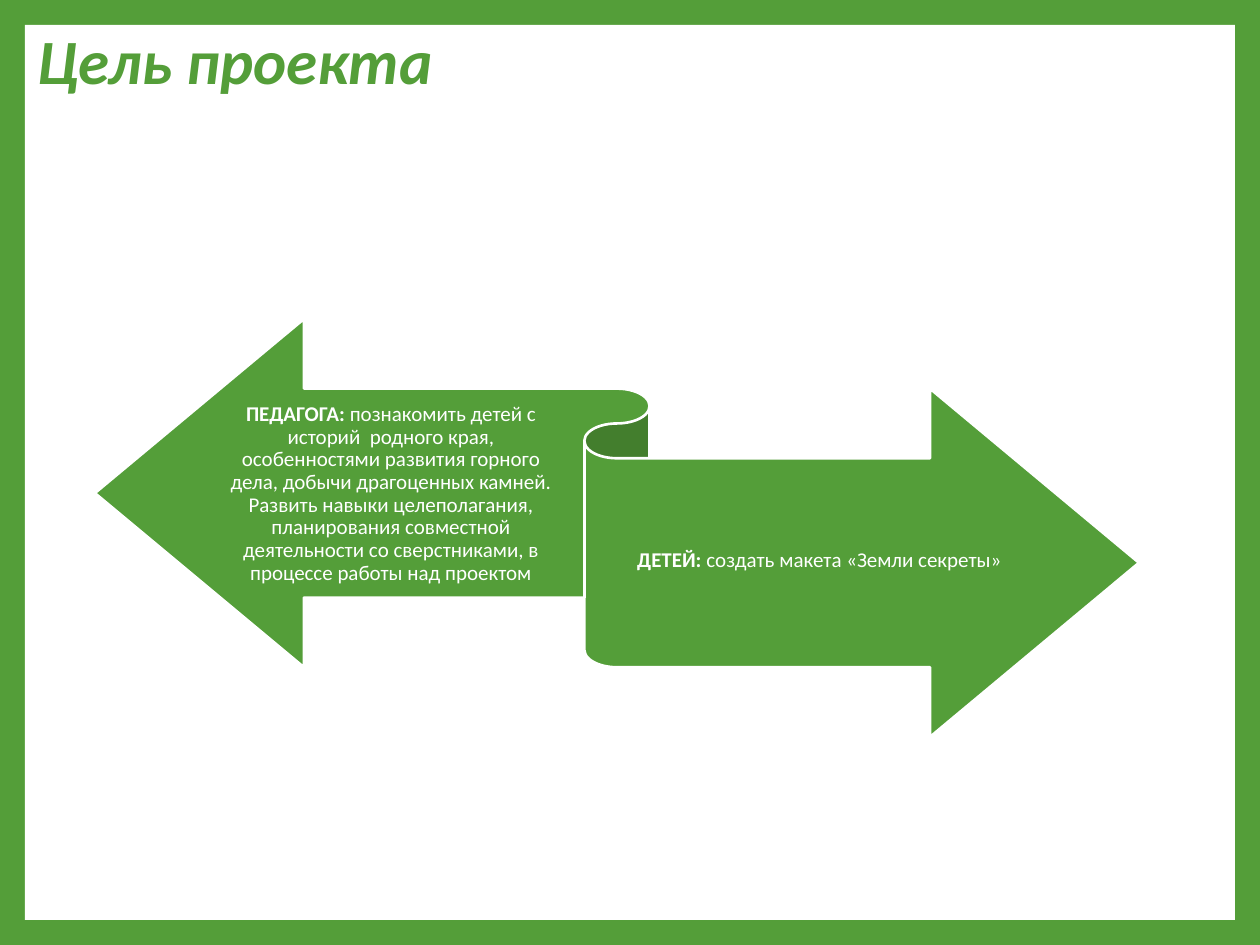
from pptx import Presentation
from pptx.dml.color import RGBColor
from pptx.enum.shapes import MSO_SHAPE
from pptx.enum.text import MSO_ANCHOR, MSO_AUTO_SIZE, PP_ALIGN
from pptx.util import Emu, Inches, Pt

# Content
TITLE = "Цель проекта"
GOALS = [
    {
        "box": (219, 392, 344, 204),
        "audience": "ПЕДАГОГА: ",
        "goal": "познакомить детей с историй  родного края, особенностями "
                "развития горного дела, добычи драгоценных камней. Развить "
                "навыки целеполагания, планирования совместной деятельности "
                "со сверстниками, в процессе работы над проектом",
    },
    {
        "box": (616, 459, 407, 204),
        "audience": "ДЕТЕЙ: ",
        "goal": "создать макета «Земли секреты»",
    },
]

# Layout in px, 126 to the inch
SLIDE_SIZE = (1260, 945)
MARGIN = 25
TITLE_BOX = (25, 27, 1210, 79)
RIBBON_BOX = (95, 319, 1044, 418)
COLORS = {"green": "549E39", "white": "FFFFFF"}
FONT = "Calibri"


def px(value):
    return Emu(round(value * Inches(1) / 126))


def color(name):
    return RGBColor.from_string(COLORS[name])


def write(frame, runs, size, color_name, italic=False, align=PP_ALIGN.LEFT, spacing=0.9):
    """Fill a text frame with one paragraph of (text, bold) runs."""
    frame.word_wrap = True
    frame.auto_size = MSO_AUTO_SIZE.NONE
    frame.vertical_anchor = MSO_ANCHOR.MIDDLE
    paragraph = frame.paragraphs[0]
    paragraph.alignment = align
    paragraph.line_spacing = spacing
    for text, bold in runs:
        run = paragraph.add_run()
        run.text = text
        run.font.name = FONT
        run.font.size = Pt(size)
        run.font.bold = bold
        run.font.italic = italic
        run.font.color.rgb = color(color_name)


def add_shape(slide, kind, box, fill, line=None):
    shape = slide.shapes.add_shape(kind, *map(px, box))
    shape.shadow.inherit = False
    shape.fill.solid()
    shape.fill.fore_color.rgb = color(fill)
    if line:
        shape.line.color.rgb = color(line)
        shape.line.width = Pt(1.5)
    else:
        shape.line.fill.background()
    return shape


def main():
    presentation = Presentation()
    presentation.slide_width, presentation.slide_height = map(px, SLIDE_SIZE)
    slide = presentation.slides.add_slide(presentation.slide_layouts[5])

    # Green frame around a white sheet
    slide.background.fill.solid()
    slide.background.fill.fore_color.rgb = color("green")
    width, height = SLIDE_SIZE
    sheet = (MARGIN, MARGIN, width - 2 * MARGIN, height - 2 * MARGIN)
    add_shape(slide, MSO_SHAPE.RECTANGLE, sheet, "white")

    # Ribbon with the two goals
    add_shape(slide, MSO_SHAPE.LEFT_RIGHT_RIBBON, RIBBON_BOX, "green", line="white")
    for goal in GOALS:
        frame = slide.shapes.add_textbox(*map(px, goal["box"])).text_frame
        frame.margin_left = frame.margin_right = 0
        write(frame, [(goal["audience"], True), (goal["goal"], False)],
              size=12, color_name="white", align=PP_ALIGN.CENTER)

    # Title, brought in front of the sheet
    title = slide.shapes.title
    title.left, title.top, title.width, title.height = map(px, TITLE_BOX)
    write(title.text_frame, [(TITLE, True)], size=36, color_name="green",
          italic=True, spacing=0.8)
    slide.shapes.element.append(title.element)

    presentation.save("out.pptx")


if __name__ == "__main__":
    main()
